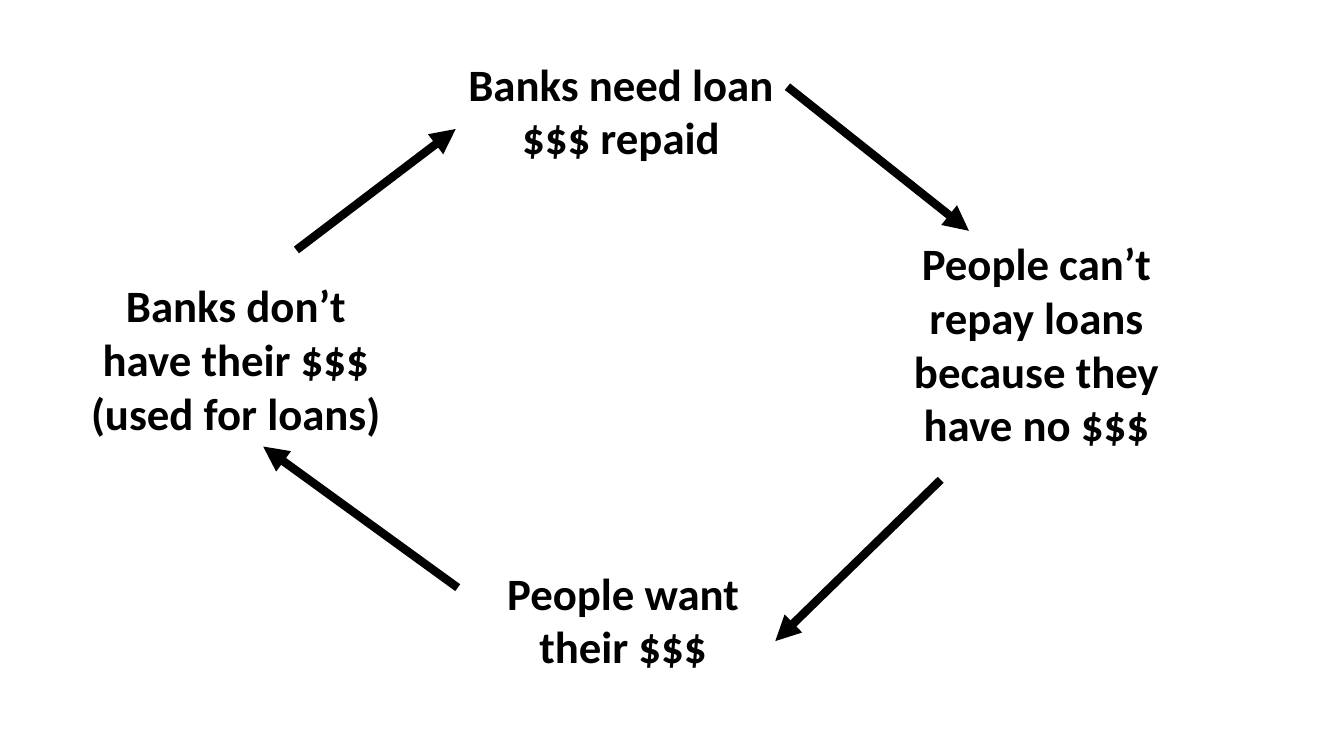
from lxml import etree
from pptx import Presentation
from pptx.dml.color import RGBColor
from pptx.enum.shapes import MSO_CONNECTOR
from pptx.enum.text import MSO_AUTO_SIZE, PP_ALIGN
from pptx.oxml.ns import qn
from pptx.util import Inches, Pt

STRAIGHT = MSO_CONNECTOR.STRAIGHT
CENTER = PP_ALIGN.CENTER
GROW = MSO_AUTO_SIZE.SHAPE_TO_FIT_TEXT

INK = "000000"
STEP_WIDTH = 3.28
STEP_FONT = {"name": "Calibri", "size": Pt(32), "bold": True}

# left, top, height, text
STEPS = [
    (4.52, 0.51, 1.18, "Banks need loan $$$ repaid"),
    (8.64, 2.29, 2.26, "People can’t repay loans because they have no $$$"),
    (4.54, 5.56, 1.18, "People want their $$$"),
    (0.7, 2.71, 1.72, "Banks don’t have their $$$ (used for loans)"),
]

# start x, start y, end x, end y
ARROWS = [
    (7.81, 0.86, 9.61, 2.29),
    (9.33, 4.76, 7.69, 6.36),
    (4.54, 5.83, 2.61, 4.43),
    (2.94, 2.48, 4.52, 1.28),
]


def color(value):
    return RGBColor.from_string(value)


def add_step(s, left, top, height, text):
    box = s.shapes.add_textbox(*map(Inches, (left, top, STEP_WIDTH, height)))
    tf = box.text_frame
    tf.word_wrap = True
    tf.auto_size = GROW
    p = tf.paragraphs[0]
    p.alignment = CENTER
    r = p.add_run()
    r.text = text
    for name, value in STEP_FONT.items():
        setattr(r.font, name, value)
    r.font.color.rgb = color(INK)


def add_arrow(s, *ends):
    arrow = s.shapes.add_connector(STRAIGHT, *map(Inches, ends))
    arrow.line.color.rgb = color(INK)
    arrow.line.width = Pt(6)
    etree.SubElement(arrow.line._get_or_add_ln(), qn("a:tailEnd"), type="triangle")
    etree.SubElement(arrow._element.spPr, qn("a:effectLst"))


def add_cycle(s):
    for step in STEPS:
        add_step(s, *step)
    for ends in ARROWS:
        add_arrow(s, *ends)


def main():
    prs = Presentation()
    prs.slide_width, prs.slide_height = Inches(13.33), Inches(7.5)
    s = prs.slides.add_slide(prs.slide_layouts[6])
    add_cycle(s)
    prs.save("out.pptx")


if __name__ == "__main__":
    main()
